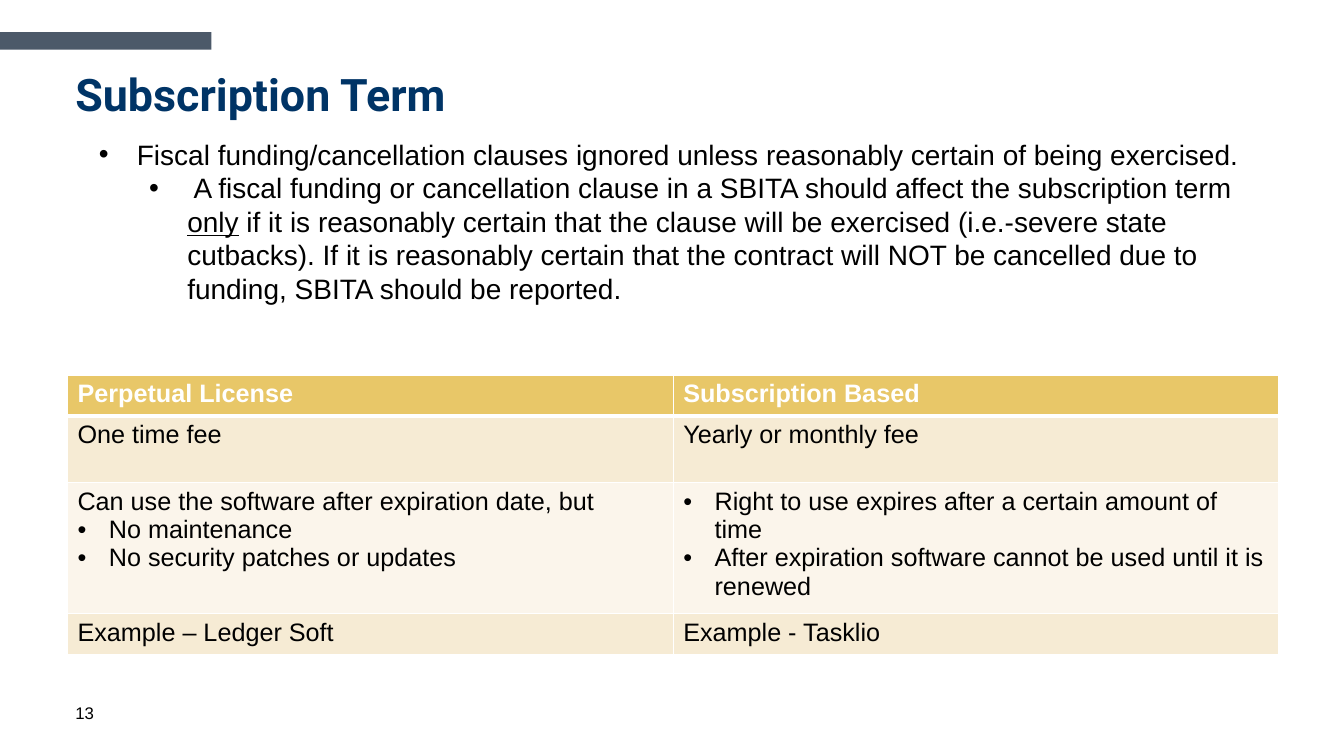
import pptx
import pptx.util
import pptx.dml.color
import pptx.enum.shapes
import pptx.oxml
import pptx.oxml.ns
from pptx.util import Cm, Pt

THEME = {
    "accent": "4C5969", "title": "003466", "text": "000000", "white": "FFFFFF",
    "header": "E8C768", "band": "F6EBD4", "plain": "FBF5EB",
    "body_font": "Arial", "title_font": "Roboto",
    "title_size": 32, "body_size": 20, "table_size": 18, "number_size": 12,
}

TITLE = "Subscription Term"
PAGE_NUMBER = "13"
# Each paragraph: (left margin in cm, or None without a bullet; runs as (text, underlined))
POINTS = [
    (0.96, [("Fiscal funding/cancellation clauses ignored unless reasonably certain "
             "of being exercised.", False)]),
    (2.23, [(" A fiscal funding or cancellation clause in a SBITA should affect the "
             "subscription term ", False),
            ("only", True),
            (" if it is reasonably certain that the clause will be exercised "
             "(i.e.-severe state cutbacks). If it is reasonably certain that the contract "
             "will NOT be cancelled due to funding, SBITA should be reported.", False)]),
]
POINT_HANGING = 0.96
CELL_HANGING = 0.79
# Each row: (height in cm, fill, cells); a cell lists (bulleted, text)
ROWS = [
    (1.03, "header", [[(False, "Perpetual License")], [(False, "Subscription Based")]]),
    (1.68, "band", [[(False, "One time fee")], [(False, "Yearly or monthly fee")]]),
    (3.1, "plain", [
        [(False, "Can use the software after expiration date, but"),
         (True, "No maintenance"),
         (True, "No security patches or updates")],
        [(True, "Right to use expires after a certain amount of time"),
         (True, "After expiration software cannot be used until it is renewed")]]),
    (1.03, "band", [[(False, "Example – Ledger Soft")], [(False, "Example - Tasklio")]]),
]
MARGIN = 1.65
CONTENT_WIDTH = 30.53


def color(name):
    return pptx.dml.color.RGBColor.from_string(THEME[name])


def add_bullet(para, margin, hanging):
    properties = para._p.get_or_add_pPr()
    properties.set("marL", str(Cm(margin)))
    properties.set("indent", str(-Cm(hanging)))
    namespace = pptx.oxml.ns.nsdecls("a")
    properties.append(pptx.oxml.parse_xml(f'<a:buFont {namespace} typeface="Arial"/>'))
    properties.append(pptx.oxml.parse_xml(f'<a:buChar {namespace} char="•"/>'))


def add_span(para, text, size, fill="text", font="body_font", bold=False, underline=False):
    span = para.add_run()
    span.text = text
    span.font.name = THEME[font]
    span.font.size = Pt(THEME[size])
    span.font.color.rgb = color(fill)
    span.font.bold = bold
    span.font.underline = underline


def paragraphs(frame, items):
    """Yield a paragraph of the frame with each item, reusing the first paragraph."""
    for index, item in enumerate(items):
        yield (frame.add_paragraph() if index else frame.paragraphs[0]), item


def add_box(page, left, top, width, height):
    frame = page.shapes.add_textbox(Cm(left), Cm(top), Cm(width), Cm(height)).text_frame
    frame.word_wrap = True
    return frame


def set_borders(cell, bottom):
    """Draw white cell borders, with the bottom one as wide as asked, in points."""
    properties = cell._tc.get_or_add_tcPr()
    for side, width in (("L", 1), ("R", 1), ("T", 1), ("B", bottom)):
        properties.append(pptx.oxml.parse_xml(
            f'<a:ln{side} {pptx.oxml.ns.nsdecls("a")} w="{Pt(width)}"><a:solidFill>'
            f'<a:srgbClr val="{THEME["white"]}"/></a:solidFill></a:ln{side}>'))


def add_comparison(page):
    height = sum(row[0] for row in ROWS)
    table = page.shapes.add_table(len(ROWS), 2, Cm(MARGIN + 0.05), Cm(9.45),
                                  Cm(CONTENT_WIDTH), Cm(height)).table
    table.horz_banding = False
    for column in table.columns:
        column.width = Cm(CONTENT_WIDTH / 2)
    for row_index, (row_height, fill, contents) in enumerate(ROWS):
        table.rows[row_index].height = Cm(row_height)
        heading = row_index == 0
        for column_index, lines in enumerate(contents):
            cell = table.cell(row_index, column_index)
            set_borders(cell, 3 if row_index < 1 else 1)
            cell.fill.solid()
            cell.fill.fore_color.rgb = color(fill)
            for para, (bulleted, text) in paragraphs(cell.text_frame, lines):
                if bulleted:
                    add_bullet(para, CELL_HANGING, CELL_HANGING)
                add_span(para, text, "table_size", "white" if heading else "text",
                         bold=heading)


def main():
    deck = pptx.Presentation()
    deck.slide_width, deck.slide_height = Cm(33.87), Cm(19.05)
    page = deck.slides.add_slide(deck.slide_layouts[6])

    bar = page.shapes.add_shape(pptx.enum.shapes.MSO_SHAPE.RECTANGLE,
                                Cm(0), Cm(0.81), Cm(5.33), Cm(0.44))
    bar.shadow.inherit = False
    bar.fill.solid()
    bar.fill.fore_color.rgb = color("accent")
    bar.line.fill.background()

    number = add_box(page, MARGIN, 17.58, 7.11, 0.76)
    add_span(number.paragraphs[0], PAGE_NUMBER, "number_size")

    title = add_box(page, MARGIN, 1.7, CONTENT_WIDTH, 2.16).paragraphs[0]
    title.line_spacing = 0.9
    add_span(title, TITLE, "title_size", "title", "title_font", bold=True)

    add_comparison(page)

    points = add_box(page, 2.24, 3.33, 29.97, 4.52)
    for para, (margin, spans) in paragraphs(points, POINTS):
        add_bullet(para, margin, POINT_HANGING)
        for text, underline in spans:
            add_span(para, text, "body_size", underline=underline)

    deck.save("out.pptx")


if __name__ == "__main__":
    main()
